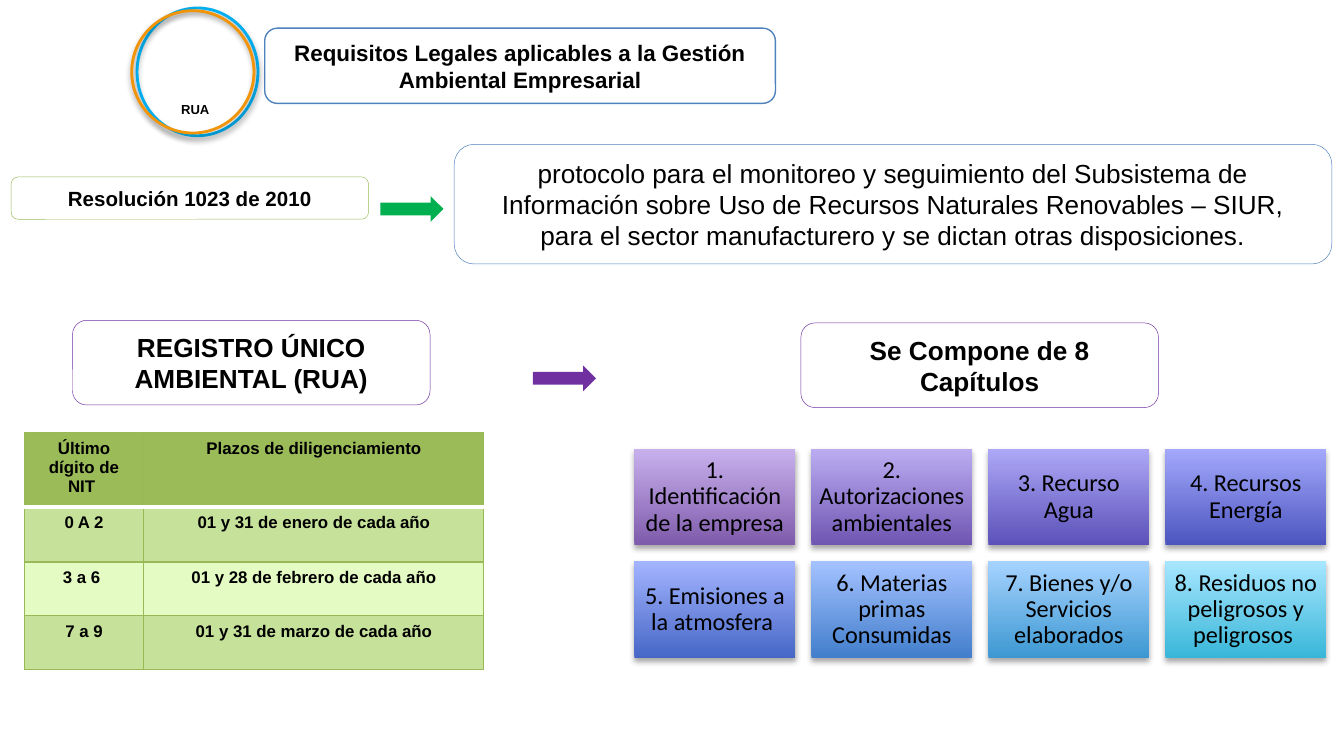
from typing import NamedTuple

from lxml.etree import SubElement
from pptx import Presentation
from pptx.dml.color import RGBColor
from pptx.enum.shapes import MSO_SHAPE
from pptx.enum.text import MSO_ANCHOR, PP_ALIGN
from pptx.oxml.ns import qn
from pptx.util import Inches, Pt

# A 16:9 slide on a square grid, 100 columns wide
WIDE = Inches(10)
HIGH = WIDE * 9 // 16
UNIT = WIDE / 100

HUES = {
    "ink": "000000", "white": "FFFFFF", "blue": "4F81BD", "lime": "9BBB59",
    "plum": "7030A0", "green": "00B050", "sky": "00B0F0", "gold": "F19408",
    "edge": "98B955", "band": "C6E19A", "pale": "E4FBC4",
}


class Area(NamedTuple):
    left: float
    top: float
    wide: float
    high: float


class Card(NamedTuple):
    text: str
    area: Area
    size: int
    line: str
    bold: bool = True


class Tile(NamedTuple):
    text: str
    low: str
    high: str


CARDS = [
    Card("Resolución 1023 de 2010", Area(0.83, 13.17, 26.6, 3.15), 11, "lime"),
    Card("protocolo para el monitoreo y seguimiento del Subsistema de Información "
         "sobre Uso de Recursos Naturales Renovables – SIUR, para el sector "
         "manufacturero y se dictan otras disposiciones.",
         Area(33.8, 10.74, 65.3, 8.9), 14, "blue", False),
    Card("REGISTRO ÚNICO AMBIENTAL (RUA)", Area(5.4, 23.84, 26.6, 6.3), 14, "plum"),
    Card("Se Compone de 8 Capítulos", Area(59.6, 24.03, 26.6, 6.3), 14, "plum"),
]
RINGS = [(Area(10.2, 0.6, 9, 9.5), "sky"), (Area(9.8, 0.8, 9.1, 9.1), "gold")]
ARROWS = [(Area(28.3, 14.6, 4.7, 1.9), "green"), (Area(39.65, 27.2, 4.7, 1.9), "plum")]
TILES = [
    Tile("1. Identificación de la empresa", "7F5BAB", "C8B0ED"),
    Tile("2. Autorizaciones ambientales", "6F56B2", "BBACF2"),
    Tile("3. Recurso Agua", "5B51B9", "AEA8F7"),
    Tile("4. Recursos Energía", "4C55BF", "A4A9FC"),
    Tile("5. Emisiones a la atmosfera ", "4767C6", "A3B4FF"),
    Tile("6. Materias primas Consumidas", "427ECC", "A4C2FF"),
    Tile("7. Bienes y/o Servicios elaborados", "3D98D2", "A6D3FF"),
    Tile("8. Residuos no peligrosos y peligrosos ", "39B7D8", "A7E6FF"),
]
DATES = [
    ("Último dígito de NIT ", "Plazos de diligenciamiento"),
    ("0 A 2", "01 y 31 de enero de cada año"),
    ("3 a 6 ", "01 y 28 de febrero de cada año"),
    ("7 a 9", "01 y 31 de marzo de cada año"),
]


def tint(hue: str) -> RGBColor:
    return RGBColor.from_string(HUES.get(hue, hue))


def place(area: Area) -> list[int]:
    return [round(side * UNIT) for side in area]


def write(frame, text: str, size: int, bold: bool = True, font: str = "Arial",
          align=PP_ALIGN.CENTER):
    """Fill the first paragraph with one run."""
    frame.word_wrap = True
    para = frame.paragraphs[0]
    para.alignment = align
    run = para.add_run()
    run.text = text
    run.font.name, run.font.size, run.font.bold = font, Pt(size), bold
    run.font.color.rgb = tint("ink")
    return para


def shape(slide, kind, area: Area, fill: str = "", line: str = "", width: float = 0):
    item = slide.shapes.add_shape(kind, *place(area))
    item.shadow.inherit = False
    if fill:
        item.fill.solid()
        item.fill.fore_color.rgb = tint(fill)
    else:
        item.fill.background()
    if line:
        item.line.color.rgb = tint(line)
        item.line.width = Pt(width)
    else:
        item.line.fill.background()
    return item


def shade(item) -> None:
    """Soft shadow straight below."""
    glow = item._element.spPr.find(qn("a:effectLst"))
    drop = SubElement(glow, qn("a:outerShdw"), blurRad="40000", dist="23000",
                      dir="5400000", rotWithShape="0")
    hue = SubElement(drop, qn("a:srgbClr"), val=HUES["ink"])
    SubElement(hue, qn("a:alpha"), val="35000")


def head(slide) -> None:
    """Title placeholder inside a rounded outline."""
    area = Area(19.7, 2.1, 38, 5.6)
    shape(slide, MSO_SHAPE.ROUNDED_RECTANGLE, area, line="blue", width=0.75)
    item = slide.shapes.title
    item.left, item.top, item.width, item.height = place(area)
    item.text_frame.vertical_anchor = MSO_ANCHOR.MIDDLE
    write(item.text_frame,
          "Requisitos Legales aplicables a la Gestión Ambiental Empresarial", 12)


def badge(slide) -> None:
    for area, hue in RINGS:
        shade(shape(slide, MSO_SHAPE.OVAL, area, line=hue, width=1.5))
    label = slide.shapes.add_textbox(*place(Area(12.5, 7.05, 7.1, 2.2)))
    write(label.text_frame, "RUA", 7, align=PP_ALIGN.LEFT)


def card(slide, data: Card) -> None:
    item = shape(slide, MSO_SHAPE.ROUNDED_RECTANGLE, data.area, "white", data.line, 0.25)
    item.text_frame.vertical_anchor = MSO_ANCHOR.MIDDLE
    write(item.text_frame, data.text, data.size, data.bold)


def tile(slide, data: Tile, spot: int) -> None:
    row, col = divmod(spot, 4)
    area = Area(47.2 + 13.17 * col, 33.4 + 8.38 * row, 11.97, 7.18)
    item = shape(slide, MSO_SHAPE.RECTANGLE, area)
    item.fill.gradient()
    item.fill.gradient_angle = 90
    for stop, hue in zip(item.fill.gradient_stops, (data.low, data.high)):
        stop.color.rgb = tint(hue)
    shade(item)
    frame = item.text_frame
    frame.vertical_anchor = MSO_ANCHOR.MIDDLE
    frame.margin_left = frame.margin_right = Inches(0.05)
    frame.margin_top = frame.margin_bottom = Inches(0.05)
    write(frame, data.text, 13, False, "Calibri").line_spacing = 0.9


def edge(cell, side: str, hue: str, width: float) -> None:
    line = SubElement(cell._tc.get_or_add_tcPr(), qn(f"a:ln{side}"), w=str(Pt(width)))
    fill = SubElement(line, qn("a:solidFill"))
    SubElement(fill, qn("a:srgbClr"), val=HUES[hue])


def grid(slide) -> None:
    area = Area(1.8, 32.2, 34.2, 17.6)
    table = slide.shapes.add_table(4, 2, *place(area)).table
    for col, wide in zip(table.columns, (8.9, 25.3)):
        col.width = round(wide * UNIT)
    for row, high in zip(table.rows, (5.5, 4.1, 4, 4)):
        row.height = round(high * UNIT)
    fills = ("lime", "band", "pale", "band")
    for r, texts in enumerate(DATES):
        for c, text in enumerate(texts):
            cell = table.cell(r, c)
            for side in "LRTB":
                split = (r, side) in ((0, "B"), (1, "T"))
                edge(cell, side, *(("white", 2) if split else ("edge", 0.75)))
            cell.fill.solid()
            cell.fill.fore_color.rgb = tint(fills[r])
            write(cell.text_frame, text, 9)


def main() -> None:
    deck = Presentation()
    deck.slide_width, deck.slide_height = WIDE, HIGH
    slide = deck.slides.add_slide(deck.slide_layouts[5])
    # Heading and badge
    head(slide)
    badge(slide)
    # Rounded cards and the arrows between them
    for data in CARDS:
        card(slide, data)
    for area, hue in ARROWS:
        shape(slide, MSO_SHAPE.RIGHT_ARROW, area, hue)
    # Chapters and deadlines
    for spot, data in enumerate(TILES):
        tile(slide, data, spot)
    grid(slide)
    deck.save("out.pptx")


if __name__ == "__main__":
    main()
